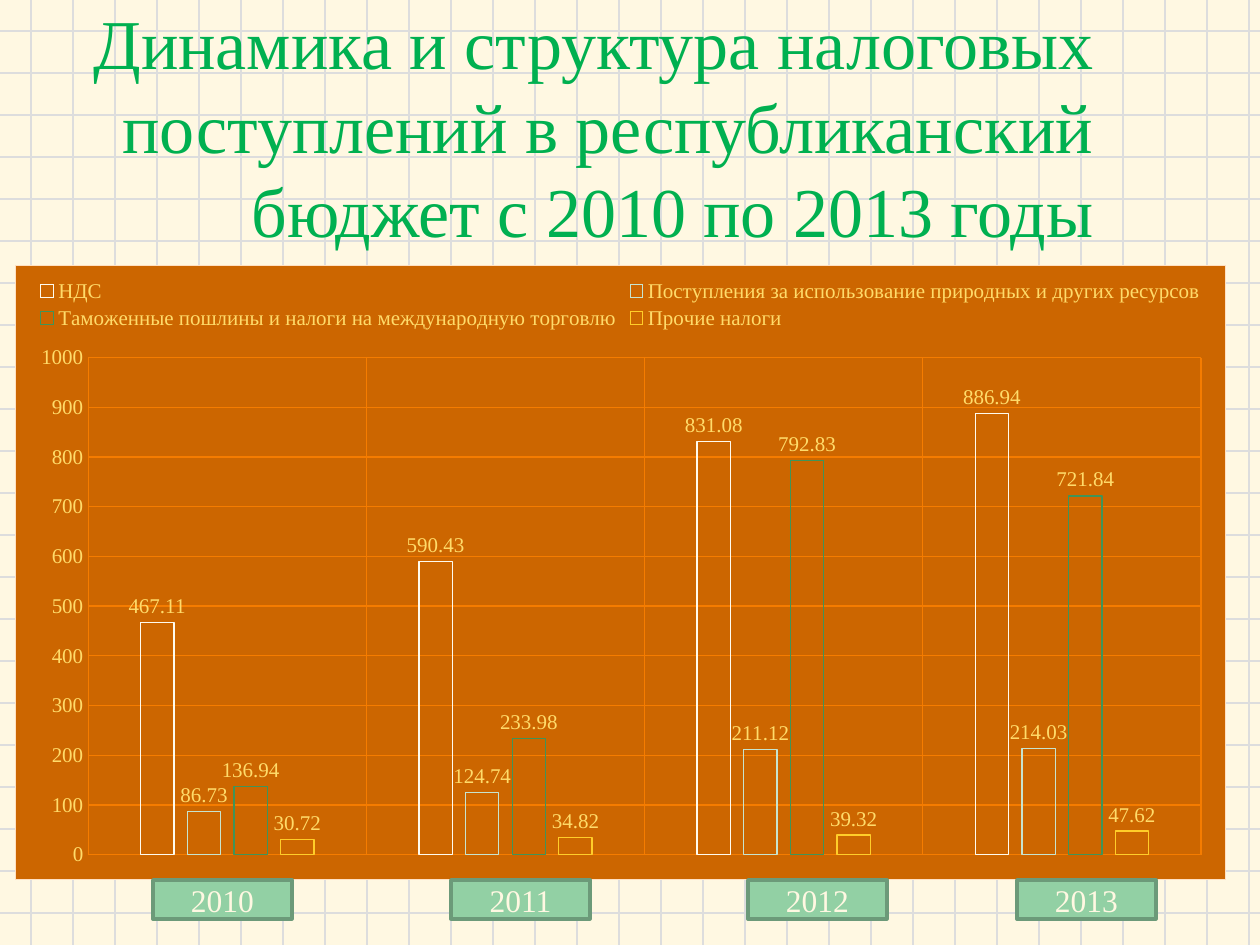
from lxml import etree
from pptx import Presentation
from pptx import util as u
from pptx.chart.data import CategoryChartData
from pptx.dml.color import RGBColor
from pptx.enum import chart as ch, shapes, text
from pptx.oxml import parse_xml
from pptx.oxml.ns import nsdecls, qn

PX = 914400 / 126
W, H = 1260, 945
FONT = "Times New Roman"
HUE = {
    "paper": "FFF8E2", "rule": "DDDDDD", "title": "00B050",
    "panel": "CC6600", "edge": "FFE0C2", "grid": "F57C00", "gold": "FFDB6A",
    "year": "92D0A4", "rim": "6C9A79",
}
SERIES = [
    ("НДС", "FFFBEE", (467.11, 590.43, 831.08, 886.94)),
    ("Поступления за использование природных и других ресурсов", "C7E4CF",
     (86.73, 124.74, 211.12, 214.03)),
    ("Таможенные пошлины и налоги на международную торговлю", "409459",
     (136.94, 233.98, 792.83, 721.84)),
    ("Прочие налоги", "FFCD29", (30.72, 34.82, 39.32, 47.62)),
]
YEARS = {"2010": 138, "2011": 436, "2012": 733, "2013": 1002}


def px(*nums):
    return [u.Emu(round(n * PX)) for n in nums]


def rgb(name):
    return RGBColor.from_string(HUE.get(name, name))


def style(font, size, hue):
    font.name, font.size, font.bold = FONT, u.Pt(size), False
    font.color.rgb = rgb(hue)


def stroke(line, hue, width=0.75):
    line.color.rgb = rgb(hue)
    line.width = u.Pt(width)


def write(shape, words, size=18, hue="paper", align=text.PP_ALIGN.CENTER):
    frame = shape.text_frame
    frame.word_wrap = True
    frame.auto_size = text.MSO_AUTO_SIZE.NONE
    frame.vertical_anchor = text.MSO_ANCHOR.MIDDLE
    frame.text = words
    para = frame.paragraphs[0]
    para.alignment = align
    style(para.runs[0].font, size, hue)


def draw_grid(slide, wide, high, step=42, start=31):
    """Squared paper behind everything."""
    ends = [(0, y, wide, y) for y in range(start, high, step)]
    ends += [(x, 0, x, high) for x in range(start, wide, step)]
    for end in ends:
        line = slide.shapes.add_connector(shapes.MSO_CONNECTOR.STRAIGHT, *px(*end))
        stroke(line.line, "rule", 1)
        etree.SubElement(line._element.spPr, qn("a:effectLst"))


def set_title(slide, x, y, w, h):
    title = slide.shapes.title
    title.left, title.top, title.width, title.height = px(x, y, w, h)
    write(title, "Динамика и структура налоговых поступлений "
          "в республиканский бюджет с 2010 по 2013 годы",
          size=40, hue="title", align=text.PP_ALIGN.RIGHT)
    # Lift the title above the squared paper
    slide.shapes._spTree.append(title._element)


def set_frame(chart):
    """Panel fill and border, clear plot area at a fixed place."""
    space = chart._chartSpace
    space.find(qn("c:chart")).addnext(parse_xml(
        f'<c:spPr {nsdecls("c", "a")}>'
        f'<a:solidFill><a:srgbClr val="{HUE["panel"]}"/></a:solidFill>'
        f'<a:ln w="9525"><a:solidFill><a:srgbClr val="{HUE["edge"]}"/>'
        '</a:solidFill></a:ln></c:spPr>'))
    area = space.chart.plotArea
    for old in area.findall(qn("c:layout")):
        area.remove(old)
    spots = "".join(f'<c:{k} val="{v}"/>' for k, v in (
        ("layoutTarget", "inner"), ("xMode", "edge"), ("yMode", "edge"),
        ("x", 0.06), ("y", 0.15), ("w", 0.92), ("h", 0.81)))
    area.insert(0, parse_xml(
        f'<c:layout {nsdecls("c")}><c:manualLayout>{spots}'
        '</c:manualLayout></c:layout>'))
    area.append(parse_xml(
        f'<c:spPr {nsdecls("c", "a")}><a:noFill/></c:spPr>'))


def add_bars(slide, x, y, w, h):
    data = CategoryChartData()
    data.categories = ["1", "2", "3", "4"]
    for name, _, vals in SERIES:
        data.add_series(name, vals)
    chart = slide.shapes.add_chart(
        ch.XL_CHART_TYPE.COLUMN_CLUSTERED, *px(x, y, w, h), data).chart
    style(chart.font, 12, "gold")
    chart.has_title = False
    set_frame(chart)

    # Legend
    chart.has_legend = True
    chart.legend.position = ch.XL_LEGEND_POSITION.TOP
    chart.legend.include_in_layout = False
    style(chart.legend.font, 12, "gold")

    # Axes
    cat, val = chart.category_axis, chart.value_axis
    for axis in (cat, val):
        axis.has_major_gridlines = True
        stroke(axis.major_gridlines.format.line, "grid")
        axis.major_tick_mark = ch.XL_TICK_MARK.NONE
    cat.visible = False
    val.minimum_scale, val.maximum_scale, val.major_unit = 0, 1000, 100
    val.format.line.fill.background()
    style(val.tick_labels.font, 12, "gold")

    # Outlined columns with values above
    plot = chart.plots[0]
    plot.gap_width, plot.overlap, plot.vary_by_categories = 315, -40, False
    for bar, (_, hue, _) in zip(plot.series, SERIES):
        bar.format.fill.background()
        stroke(bar.format.line, hue)
        tags = bar.data_labels
        tags.show_value = True
        tags.position = ch.XL_LABEL_POSITION.OUTSIDE_END
        style(tags.font, 12, "gold")


def add_years(slide, x, y, w, h):
    """Year plates under the chart, each w by h."""
    for year, left in YEARS.items():
        plate = slide.shapes.add_shape(
            shapes.MSO_SHAPE.RECTANGLE, *px(x + left, y, w, h))
        plate.shadow.inherit = False
        plate.fill.solid()
        plate.fill.fore_color.rgb = rgb("year")
        stroke(plate.line, "rim", 2)
        write(plate, year)


def main():
    deck = Presentation()
    deck.slide_width, deck.slide_height = px(W, H)
    slide = deck.slides.add_slide(deck.slide_layouts[5])
    back = slide.background.fill
    back.solid()
    back.fore_color.rgb = rgb("paper")
    draw_grid(slide, W, H)
    set_title(slide, 25, 16, 1081, 218)
    add_bars(slide, 15, 265, 1211, 615)
    add_years(slide, 15, 880, 139, 39)
    deck.save("out.pptx")


if __name__ == "__main__":
    main()
